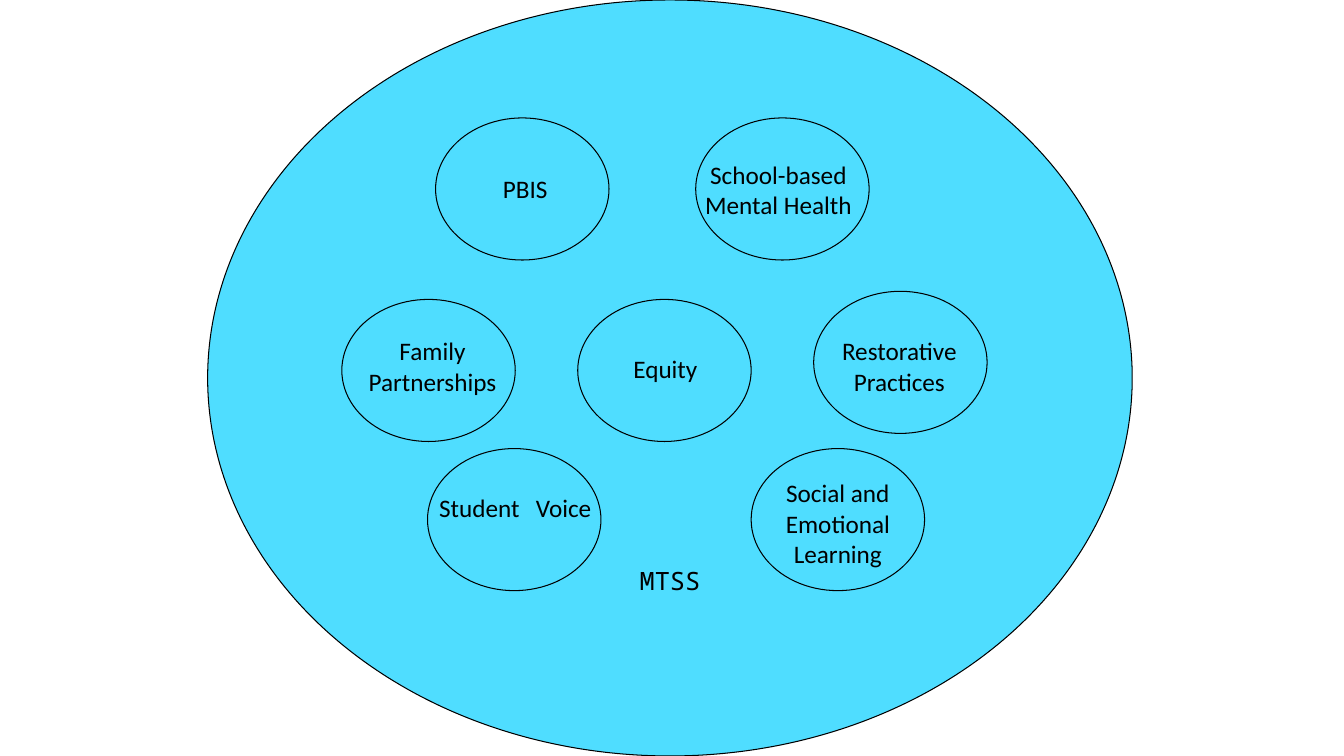
from dataclasses import dataclass

from pptx import Presentation
from pptx.dml.color import RGBColor
from pptx.enum.shapes import MSO_SHAPE
from pptx.enum.text import MSO_ANCHOR, PP_ALIGN
from pptx.slide import Slide
from pptx.util import Inches, Pt

SKY = RGBColor(0x4F, 0xDD, 0xFF)
BLACK = RGBColor(0, 0, 0)
BODY_FONT = "Calibri"
TITLE_FONT = "Noto Sans Mono"
CIRCLE_WIDTH, CIRCLE_HEIGHT = 1.72, 1.41


@dataclass(frozen=True)
class Box:
    left: float
    top: float
    width: float
    height: float


@dataclass(frozen=True)
class Topic:
    left: float
    top: float
    label: str
    label_box: Box
    word_gap: float = 0


TOPICS = [
    Topic(4.32, 1.17, "PBIS", Box(4.31, 1.67, 1.8, 0.4)),
    Topic(6.9, 1.17, "School-based\nMental Health", Box(6.82, 1.53, 1.8, 0.71)),
    Topic(3.39, 2.97, "Family\nPartnerships", Box(3.39, 3.28, 1.8, 0.71)),
    Topic(5.73, 2.97, "Equity", Box(5.83, 3.46, 1.54, 0.4)),
    Topic(8.07, 2.89, "Restorative Practices", Box(8.02, 3.28, 1.8, 0.71)),
    Topic(7.45, 4.45, "Social and\nEmotional\nLearning", Box(7.45, 4.69, 1.72, 1.01)),
    Topic(4.24, 4.45, "Student Voice", Box(4.25, 4.83, 1.72, 0.71), word_gap=7.5),
]


def add_ellipse(slide: Slide, box: Box) -> None:
    shape = slide.shapes.add_shape(
        MSO_SHAPE.OVAL,
        Inches(box.left), Inches(box.top), Inches(box.width), Inches(box.height),
    )
    shape.shadow.inherit = False
    shape.fill.solid()
    shape.fill.fore_color.rgb = SKY
    shape.line.color.rgb = BLACK
    shape.line.width = Pt(0.75)


def add_label(
    slide: Slide, box: Box, text: str, font_name: str = BODY_FONT, word_gap: float = 0
) -> None:
    text_box = slide.shapes.add_textbox(
        Inches(box.left), Inches(box.top), Inches(box.width), Inches(box.height)
    )
    text_frame = text_box.text_frame
    text_frame.word_wrap = True
    text_frame.vertical_anchor = MSO_ANCHOR.TOP
    text_frame.text = text
    for paragraph in text_frame.paragraphs:
        paragraph.alignment = PP_ALIGN.CENTER
        if word_gap:
            first, space, second = paragraph.text.partition(" ")
            paragraph.runs[0].text = first
            gap_run = paragraph.add_run()
            gap_run.text = space
            gap_run.font._element.set("spc", str(round(word_gap * 100)))
            paragraph.add_run().text = second
        for run in paragraph.runs:
            run.font.name = font_name
            run.font.size = Pt(18)
            run.font.color.rgb = BLACK


def add_topic(slide: Slide, topic: Topic) -> None:
    add_ellipse(slide, Box(topic.left, topic.top, CIRCLE_WIDTH, CIRCLE_HEIGHT))
    add_label(slide, topic.label_box, topic.label, word_gap=topic.word_gap)


def main() -> None:
    presentation = Presentation()
    presentation.slide_width = Inches(13.33)
    presentation.slide_height = Inches(7.5)
    slide = presentation.slides.add_slide(presentation.slide_layouts[6])
    add_ellipse(slide, Box(2.06, 0, 9.17, 7.5))
    add_label(slide, Box(3.61, 5.56, 6.07, 1.34), "MTSS", TITLE_FONT)
    for topic in TOPICS:
        add_topic(slide, topic)
    presentation.save("out.pptx")


if __name__ == "__main__":
    main()
